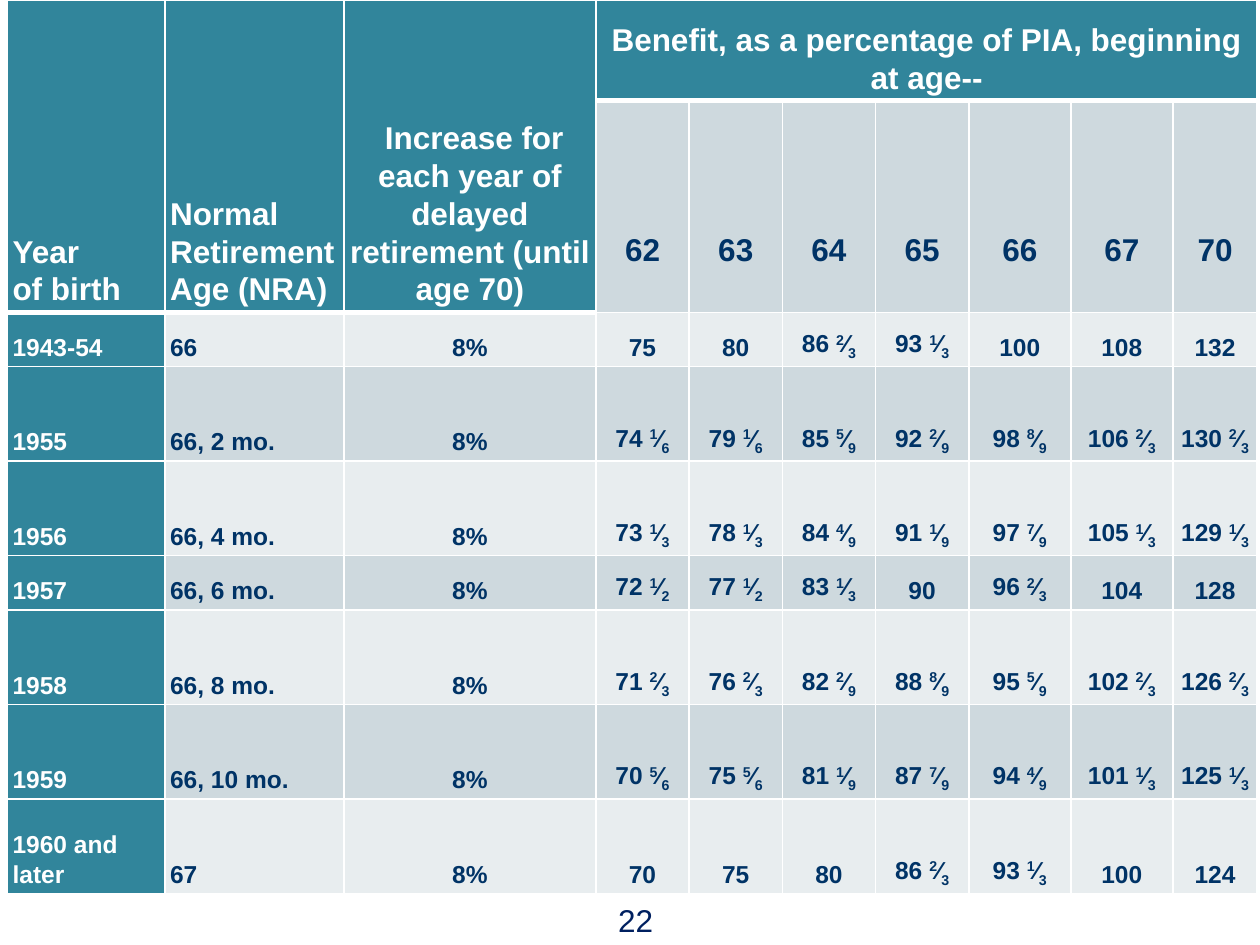
from dataclasses import dataclass

from lxml.etree import SubElement
from pptx import Presentation
from pptx.dml.color import RGBColor
from pptx.enum.text import MSO_ANCHOR, PP_ALIGN
from pptx.oxml.ns import qn
from pptx.util import Inches, Pt


@dataclass(frozen=True)
class Theme:
    font: str = "Arial"
    teal: str = "31859B"
    dark: str = "CED9DE"
    light: str = "E8EDEF"
    white: str = "FFFFFF"
    navy: str = "003366"
    page: str = "002060"
    head: int = 18
    body: int = 14


theme = Theme()

heads = [
    "Year\vof birth",
    "Normal\vRetirement\vAge (NRA)",
    " Increase for each year of delayed retirement (until age 70)",
    "Benefit, as a percentage of PIA, beginning at age--",
]
ages = ["62", "63", "64", "65", "66", "67", "70"]
births = [
    ("1943-54", "66", "75|80|86 2/3|93 1/3|100|108|132"),
    ("1955", "66, 2 mo.", "74 1/6|79 1/6|85 5/9|92 2/9|98 8/9|106 2/3|130 2/3"),
    ("1956", "66, 4 mo.", "73 1/3|78 1/3|84 4/9|91 1/9|97 7/9|105 1/3|129 1/3"),
    ("1957", "66, 6 mo.", "72 1/2|77 1/2|83 1/3|90|96 2/3|104|128"),
    ("1958", "66, 8 mo.", "71 2/3|76 2/3|82 2/9|88 8/9|95 5/9|102 2/3|126 2/3"),
    ("1959", "66, 10 mo.", "70 5/6|75 5/6|81 1/9|87 7/9|94 4/9|101 1/3|125 1/3"),
    ("1960 and later", "67", "70|75|80|86 2/3|93 1/3|100|124"),
]
grid = [heads + [""] * 6, [""] * 3 + ages]
grid += [[year, nra, "8%"] + shares.split("|") for year, nra, shares in births]
widths = [1.25, 1.42, 2] + [0.74] * 4 + [0.81, 0.81, 0.67]
heights = [0.8, 1.68, 0.43, 0.75, 0.75, 0.43, 0.75, 0.75, 0.75]


def edge(cell, base):
    """Draw white cell borders; base is the width of the bottom one."""
    props = cell._tc.get_or_add_tcPr()
    for side, width in (("L", 1), ("R", 1), ("T", 1), ("B", base)):
        line = SubElement(props, qn(f"a:ln{side}"), w=str(Pt(width)))
        fill = SubElement(line, qn("a:solidFill"))
        SubElement(fill, qn("a:srgbClr"), val=theme.white)


def write(para, text, size, color):
    """Write text, setting a fraction such as 2/3 as raised and lowered digits."""
    if "/" in text:
        whole, part = text.split(" ")
        top, low = part.split("/")
        for piece, shift in ((whole + " ", 0), (top, 30), ("⁄", 0), (low, -25)):
            run = para.add_run()
            run.text = piece
            if shift:
                run._r.get_or_add_rPr().set("baseline", str(shift * 1000))
    else:
        para.text = text
    para.font.name = theme.font
    para.font.size = Pt(size)
    para.font.color.rgb = RGBColor.from_string(color)


deck = Presentation()
deck.slide_width, deck.slide_height = Inches(10), Inches(7.5)
slide = deck.slides.add_slide(deck.slide_layouts[6])

table = slide.shapes.add_table(
    len(heights), len(widths), Inches(0.06), 0,
    Inches(sum(widths)), Inches(sum(heights)),
).table
table.first_row = table.horz_banding = False
for col, width in zip(table.columns, widths):
    col.width = Inches(width)
for row, height in zip(table.rows, heights):
    row.height = Inches(height)

for r, line in enumerate(grid):
    for c, text in enumerate(line):
        cell = table.cell(r, c)
        title = r == 0 or (r == 1 and c < 3)
        teal = title or c == 0
        edge(cell, 3 if title else 1)
        cell.fill.solid()
        shade = theme.teal if teal else theme.dark if r % 2 else theme.light
        cell.fill.fore_color.rgb = RGBColor.from_string(shade)
        cell.vertical_anchor = MSO_ANCHOR.BOTTOM
        cell.margin_left = cell.margin_right = Inches(0.04)
        cell.margin_top = Inches(0.04)
        cell.margin_bottom = Inches(0.35 if r == 1 and c > 2 else 0.04)
        para = cell.text_frame.paragraphs[0]
        para.line_spacing = 1.07
        para.alignment = PP_ALIGN.LEFT if c < 2 else PP_ALIGN.CENTER
        write(para, text, theme.head if r < 2 else theme.body,
              theme.white if teal else theme.navy)
        para.font.bold = True

for c in range(3):
    table.cell(0, c).merge(table.cell(1, c))
table.cell(0, 3).merge(table.cell(0, 9))

box = slide.shapes.add_textbox(Inches(3.88), Inches(7.1), Inches(2.33), Inches(0.4))
frame = box.text_frame
frame.word_wrap = True
frame.vertical_anchor = MSO_ANCHOR.MIDDLE
number = frame.paragraphs[0]
number.alignment = PP_ALIGN.CENTER
write(number, "22", theme.head, theme.page)

deck.save("out.pptx")
